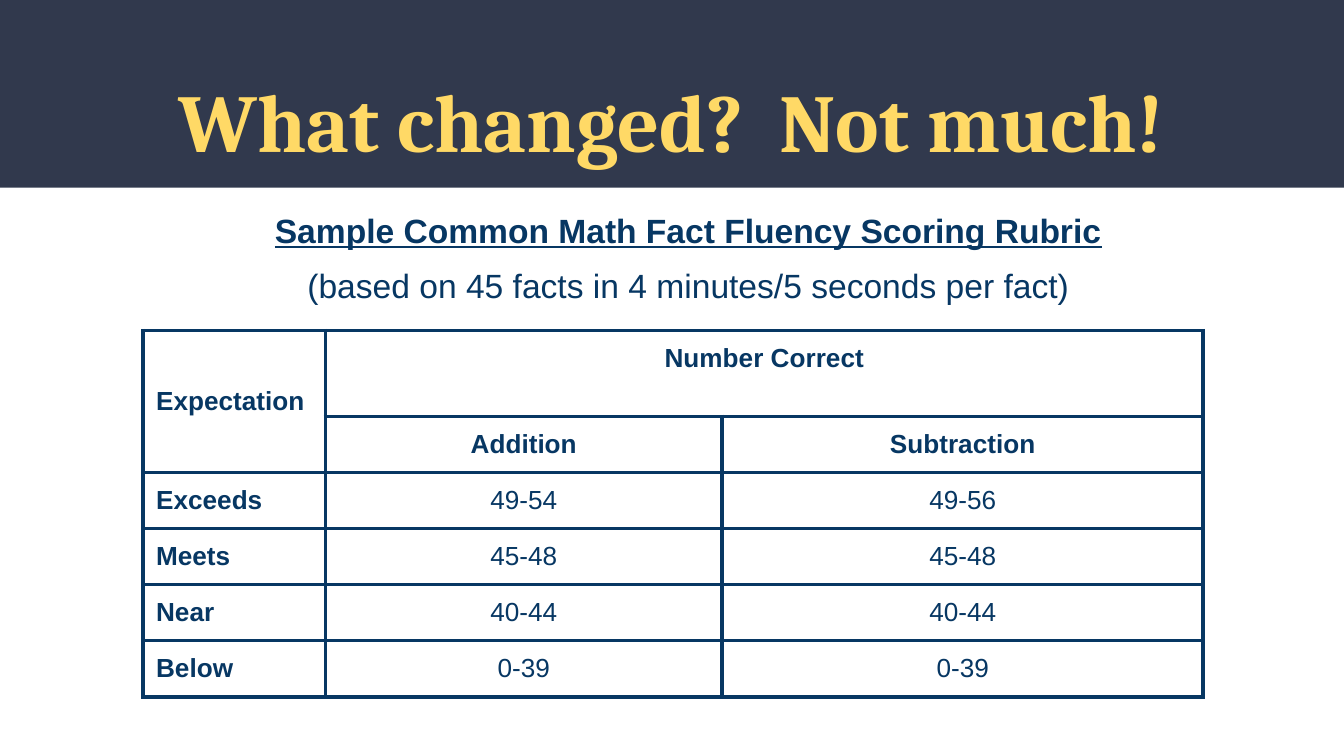
from lxml.etree import SubElement
from pptx import Presentation
from pptx.dml.color import RGBColor
from pptx.enum.shapes import MSO_SHAPE
from pptx.enum.text import MSO_ANCHOR, MSO_AUTO_SIZE, PP_ALIGN
from pptx.oxml.ns import qn
from pptx.util import Cm, Pt

COLORS = {"band": "31394D", "title": "FFD966", "ink": "073763", "paper": "FFFFFF"}
COLUMN_WIDTHS = [3.45, 7.5, 9.09]
ROW_HEIGHTS = [1.62] + [1.06] * 5
RUBRIC = [
    ["Expectation", "Number Correct", ""],
    ["", "Addition", "Subtraction"],
    ["Exceeds", "49-54", "49-56"],
    ["Meets", "45-48", "45-48"],
    ["Near", "40-44", "40-44"],
    ["Below", "0-39", "0-39"],
]
HEADER_ROWS = 2


class SlideBuilder:
    def __init__(self, slide, font="Arial", inset=0.25):
        self.slide = slide
        self.font = font
        self.inset = Cm(inset)

    def color(self, name):
        return RGBColor.from_string(COLORS[name])

    def add_text(self, paragraph, text, size, bold=False, underline=False,
                 color="ink", font=None, align=PP_ALIGN.CENTER):
        paragraph.alignment = align
        run = paragraph.add_run()
        run.text = text
        run.font.name = font or self.font
        run.font.size = Pt(size)
        run.font.bold = bold
        run.font.underline = underline
        run.font.color.rgb = self.color(color)

    def band(self, width, height):
        """Draw the title background behind everything else."""
        shape = self.slide.shapes.add_shape(MSO_SHAPE.RECTANGLE, 0, 0, width, height)
        shape.shadow.inherit = False
        shape.fill.solid()
        shape.fill.fore_color.rgb = self.color("band")
        shape.line.fill.background()
        shape.element.getparent().insert(2, shape.element)

    def title(self, text, left, top, width, height):
        shape = self.slide.shapes.title
        shape.left, shape.top = Cm(left), Cm(top)
        shape.width, shape.height = Cm(width), Cm(height)
        frame = shape.text_frame
        frame.auto_size = MSO_AUTO_SIZE.NONE
        frame.vertical_anchor = MSO_ANCHOR.MIDDLE
        self.add_text(frame.paragraphs[0], text, 44, bold=True, color="title", font="Cambria")

    def caption(self, heading, detail, left, top, width, height):
        shape = self.slide.shapes.add_textbox(Cm(left), Cm(top), Cm(width), Cm(height))
        frame = shape.text_frame
        frame.word_wrap = True
        frame.margin_left = frame.margin_right = self.inset
        frame.margin_top = frame.margin_bottom = self.inset
        self.add_text(frame.paragraphs[0], heading, 18, bold=True, underline=True)
        paragraph = frame.add_paragraph()
        paragraph.space_before = Pt(8)
        self.add_text(paragraph, detail, 18)

    def cell_borders(self, cell, width=2.25):
        properties = cell._tc.get_or_add_tcPr()
        for side in ("a:lnL", "a:lnR", "a:lnT", "a:lnB"):
            line = SubElement(properties, qn(side), w=str(Pt(width)))
            fill = SubElement(line, qn("a:solidFill"))
            SubElement(fill, qn("a:srgbClr"), val=COLORS["ink"])

    def table(self, rows, left, top):
        frame = self.slide.shapes.add_table(
            len(rows), len(COLUMN_WIDTHS), Cm(left), Cm(top),
            Cm(sum(COLUMN_WIDTHS)), Cm(sum(ROW_HEIGHTS)))
        table = frame.table
        table.first_row = table.horz_banding = False
        for column, width in zip(table.columns, COLUMN_WIDTHS):
            column.width = Cm(width)
        for row, height in zip(table.rows, ROW_HEIGHTS):
            row.height = Cm(height)
        for row_index, values in enumerate(rows):
            for column_index, text in enumerate(values):
                cell = table.cell(row_index, column_index)
                self.cell_borders(cell)
                cell.fill.solid()
                cell.fill.fore_color.rgb = self.color("paper")
                cell.margin_left = cell.margin_right = self.inset
                cell.margin_top = cell.margin_bottom = self.inset
                if text:
                    self.add_text(
                        cell.text_frame.paragraphs[0], text, 14,
                        bold=row_index < HEADER_ROWS or column_index == 0,
                        align=PP_ALIGN.CENTER if column_index else PP_ALIGN.LEFT)
        table.cell(0, 0).merge(table.cell(1, 0))
        table.cell(0, 0).vertical_anchor = MSO_ANCHOR.MIDDLE
        table.cell(0, 1).merge(table.cell(0, 2))


def main():
    presentation = Presentation()
    presentation.slide_width, presentation.slide_height = Cm(25.4), Cm(14.29)
    title_only = presentation.slide_layouts[5]
    builder = SlideBuilder(presentation.slides.add_slide(title_only))
    builder.band(presentation.slide_width, Cm(3.55))
    builder.title("What changed?  Not much!", 0.86, 1.4, 23.67, 1.73)
    builder.table(RUBRIC, 2.7, 6.25)
    builder.caption("Sample Common Math Fact Fluency Scoring Rubric",
                    "(based on 45 facts in 4 minutes/5 seconds per fact)",
                    4.06, 3.71, 17.9, 2.82)
    presentation.save("out.pptx")


if __name__ == "__main__":
    main()
